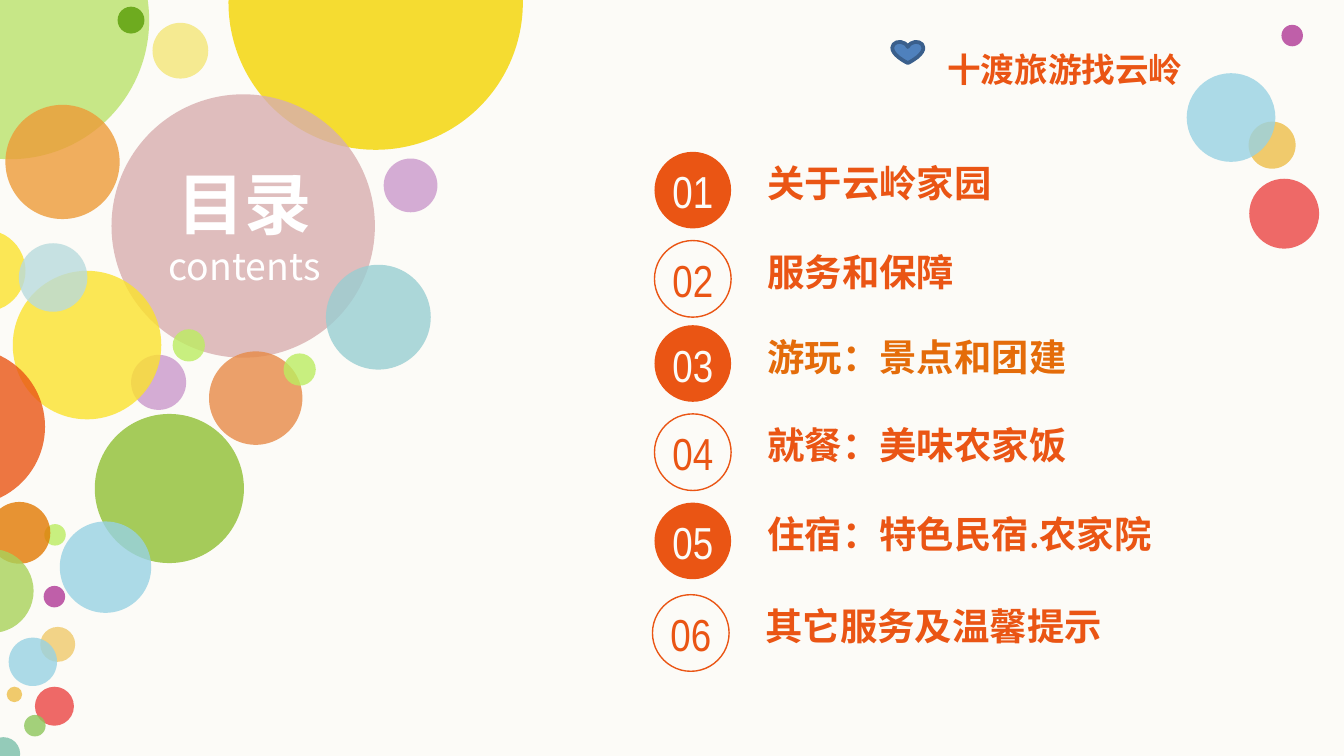
from lxml import etree
from pptx import Presentation
from pptx.dml.color import RGBColor
from pptx.enum.shapes import MSO_SHAPE
from pptx.enum.text import MSO_AUTO_SIZE, PP_ALIGN
from pptx.oxml.ns import qn
from pptx.util import Inches, Pt

OVAL, HEART = MSO_SHAPE.OVAL, MSO_SHAPE.HEART
LEFT, CENTER = PP_ALIGN.LEFT, PP_ALIGN.CENTER
GROW = MSO_AUTO_SIZE.SHAPE_TO_FIT_TEXT

WIDTH = Inches(10)
HEIGHT = WIDTH * 9 // 16
COLUMNS = 100
CELL = WIDTH // COLUMNS  # square grid cell, used for columns and rows

CJK, SANS, NARROW = "Noto Sans CJK SC", "Calibri", "Arial Narrow"

WHITE = RGBColor(0xFF, 0xFF, 0xFF)
CREAM = RGBColor(0xFC, 0xFB, 0xF7)
ORANGE = RGBColor(0xEA, 0x55, 0x14)
AMBER = RGBColor(0xE4, 0x6C, 0x0A)
PUMPKIN = RGBColor(0xE2, 0x79, 0x02)
APRICOT = RGBColor(0xED, 0x9B, 0x38)
TAN = RGBColor(0xE7, 0x8A, 0x47)
SAND = RGBColor(0xF0, 0xCA, 0x6C)
YELLOW = RGBColor(0xF4, 0xD5, 0x00)
LEMON = RGBColor(0xFB, 0xE2, 0x2D)
PALE_YELLOW = RGBColor(0xF5, 0xEA, 0x91)
LIME = RGBColor(0xBC, 0xED, 0x61)
LIGHT_GREEN = RGBColor(0xBA, 0xE3, 0x6B)
DARK_GREEN = RGBColor(0x6E, 0xAB, 0x1F)
LEAF = RGBColor(0xA5, 0xCB, 0x5A)
MEADOW = RGBColor(0xA9, 0xD2, 0x5A)
GRASS = RGBColor(0x8D, 0xC6, 0x5B)
JADE = RGBColor(0x7B, 0xBF, 0xAA)
TEAL = RGBColor(0x99, 0xCE, 0xD2)
MIST = RGBColor(0xB9, 0xDB, 0xDD)
SKY = RGBColor(0x98, 0xD2, 0xE3)
ROSE = RGBColor(0xD8, 0xAE, 0xAF)
LILAC = RGBColor(0xCB, 0x99, 0xCC)
PURPLE = RGBColor(0xB0, 0x38, 0x96)
RED = RGBColor(0xEB, 0x45, 0x44)
BLUE = RGBColor(0x4F, 0x81, 0xBD)
NAVY = RGBColor(0x3A, 0x5F, 0x8C)

SOLID, SHEER = 100, 80

# column, row, diameter, colour, opacity; from back to front
LEFT_BUBBLES = [
    (-9.6, -8.85, 20.7, LIGHT_GREEN, SHEER),
    (8.75, 0.5, 2, DARK_GREEN, SOLID),
    (0.4, 7.8, 8.5, APRICOT, SHEER),
    (11.35, 1.7, 4.15, PALE_YELLOW, SOLID),
    (17, -10.75, 21.9, YELLOW, SHEER),
    (8.3, 7.02, 19.6, ROSE, SHEER),
    (24.25, 19.7, 7.8, TEAL, SHEER),
    (28.55, 11.8, 4, LILAC, SHEER),
    (15.55, 26.15, 6.95, TAN, SHEER),
    (7.05, 30.8, 11.1, LEAF, SOLID),
    (21.1, 26.3, 2.4, LIME, SHEER),
    (12.85, 24.5, 2.4, LIME, SHEER),
    (9.75, 26.4, 4.1, LILAC, SHEER),
    (0.95, 20.15, 11.05, LEMON, SHEER),
    (-4.2, 17.1, 6.1, LEMON, SHEER),
    (3.3, 39, 1.6, LIME, SHEER),
    (3.25, 43.6, 1.6, PURPLE, SHEER),
    (3, 46.65, 2.6, SAND, SHEER),
    (0.5, 51.1, 1.15, SAND, SOLID),
    (-1, 54.85, 2.5, JADE, SHEER),
    (2.6, 51.1, 2.9, RED, SHEER),
    (1.8, 53.2, 1.6, GRASS, SHEER),
    (0.65, 47.45, 3.6, SKY, SHEER),
    (1.4, 18.1, 5.1, MIST, SHEER),
    (4.45, 38.8, 6.8, SKY, SHEER),
    (-0.85, 37.35, 4.6, PUMPKIN, SHEER),
    (-3.75, 40.85, 6.25, MEADOW, SHEER),
    (-8.35, 25.9, 11.7, ORANGE, SHEER),
]
RIGHT_BUBBLES = [
    (95.35, 1.85, 1.6, PURPLE, SHEER),
    (92.9, 9.05, 3.5, SAND, SOLID),
    (92.95, 13.3, 5.2, RED, SHEER),
    (88.3, 5.45, 6.6, SKY, SHEER),
]

# column, row, label width, label, label font, label colour
CONTENTS = [
    (48.7, 11.3, 21.3, "关于云岭家园", NARROW, ORANGE),
    (48.7, 17.9, 21.3, "服务和保障", NARROW, ORANGE),
    (48.7, 24.2, 29.1, "游玩：景点和团建", SANS, AMBER),
    (48.7, 30.8, 23.6, "就餐：美味农家饭", SANS, ORANGE),
    (48.7, 37.4, 31.2, "住宿：特色民宿.农家院", SANS, ORANGE),
    (48.55, 44.25, 27.7, "其它服务及温馨提示", SANS, ORANGE),
]
BADGE = 5.7


class BubbleSlide:
    """Holds the slide and draws on it; all lengths are in grid cells."""

    def __init__(self, deck):
        self.slide = deck.slides.add_slide(deck.slide_layouts[6])
        background = self.slide.background.fill
        background.solid()
        background.fore_color.rgb = CREAM

    def figure(self, kind, box, fill=None, line=None, weight=0.75, opacity=SOLID):
        shape = self.slide.shapes.add_shape(kind, *(round(n * CELL) for n in box))
        shape.shadow.inherit = False
        if fill is None:
            shape.fill.background()
        else:
            shape.fill.solid()
            shape.fill.fore_color.rgb = fill
        if opacity < SOLID:
            colour = shape.fill._xPr.find(".//" + qn("a:srgbClr"))
            etree.SubElement(colour, qn("a:alpha")).set("val", str(opacity * 1000))
        if line is None:
            shape.line.fill.background()
        else:
            shape.line.color.rgb = line
            shape.line.width = Pt(weight)

    def bubbles(self, rows):
        for column, row, size, colour, opacity in rows:
            self.figure(OVAL, (column, row, size, size), colour, opacity=opacity)

    def text(self, box, lines, font, colour, align=LEFT, inset=False, wrap=True):
        """Each line is (wording, points, bold)."""
        frame = self.slide.shapes.add_textbox(*(round(n * CELL) for n in box)).text_frame
        frame.word_wrap = wrap
        frame.auto_size = GROW
        if not inset:
            frame.margin_left = frame.margin_right = 0
            frame.margin_top = frame.margin_bottom = 0
        frame.text = "\n".join(wording for wording, _, _ in lines)
        for paragraph, (_, points, bold) in zip(frame.paragraphs, lines):
            paragraph.alignment = align
            for run in paragraph.runs:
                run.font.size, run.font.bold, run.font.name = Pt(points), bold, font
                run.font.color.rgb = colour
                properties = run._r.get_or_add_rPr()
                properties.set("lang", "zh-CN")
                etree.SubElement(properties, qn("a:ea")).set("typeface", CJK)

    def entry(self, number, column, row, width, label, font, colour):
        """One contents line; odd numbers have a filled badge, even ones a ring."""
        filled = number % 2 == 1
        badge = (column, row, BADGE, BADGE)
        if filled:
            self.figure(OVAL, badge, fill=ORANGE)
        else:
            self.figure(OVAL, badge, line=ORANGE)
        self.text((column, row + 0.9, BADGE, 4), [(f"{number:02}", 24, False)],
                  NARROW, CREAM if filled else ORANGE, CENTER)
        self.text((column + 8.4, row + 0.65, width, 3.4), [(label, 20, True)],
                  font, colour)


def main():
    deck = Presentation()
    deck.slide_width, deck.slide_height = WIDTH, HEIGHT
    page = BubbleSlide(deck)

    page.bubbles(LEFT_BUBBLES)
    page.text((10.65, 12.1, 15.1, 9.4), [("目录", 36, True), ("contents", 20, False)],
              CJK, WHITE, CENTER)

    page.bubbles(RIGHT_BUBBLES)
    page.text((69.5, 3.15, 20.3, 4), [("十渡旅游找云岭", 18, True)],
              SANS, ORANGE, inset=True, wrap=False)
    page.figure(HEART, (66.4, 3.1, 2.3, 1.6), BLUE, NAVY, weight=2)

    for number, entry in enumerate(CONTENTS, start=1):
        page.entry(number, *entry)

    deck.save("out.pptx")


if __name__ == "__main__":
    main()
